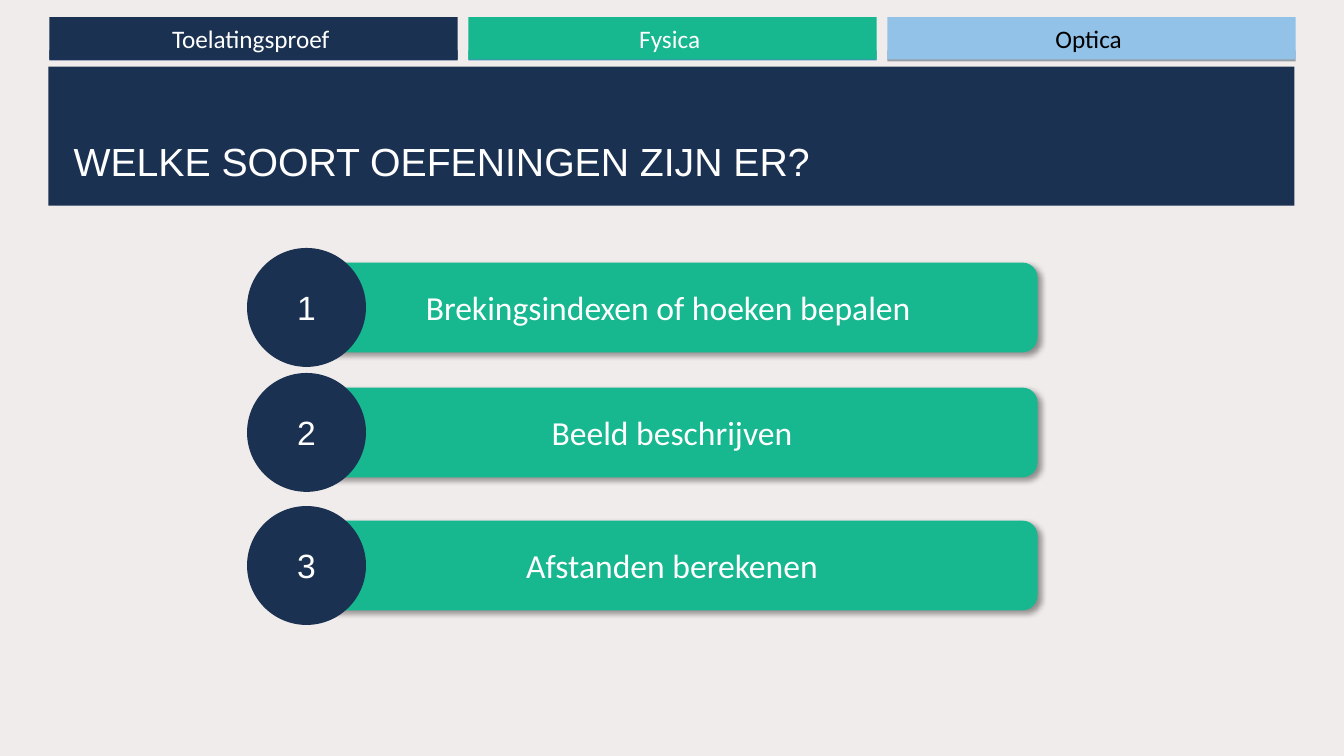
"""Build the slide on kinds of optics exercises."""
from lxml import etree
from pptx import Presentation
from pptx.dml.color import RGBColor
from pptx.enum.shapes import MSO_SHAPE
from pptx.enum.text import MSO_ANCHOR, PP_ALIGN
from pptx.oxml.ns import qn
from pptx.util import Inches, Pt

RECT, ROUND, OVAL = MSO_SHAPE.RECTANGLE, MSO_SHAPE.ROUNDED_RECTANGLE, MSO_SHAPE.OVAL
CENTER, LEFT = PP_ALIGN.CENTER, PP_ALIGN.LEFT
MIDDLE, BOTTOM = MSO_ANCHOR.MIDDLE, MSO_ANCHOR.BOTTOM
NAVY, GREEN, WHITE, BLACK = "1B3151", "17B790", "FFFFFF", "000000"

TITLE = "WELKE SOORT OEFENINGEN ZIJN ER?"
TABS = [
    ("Toelatingsproef ", NAVY, WHITE, "1A3260", 0.1),
    ("Fysica ", GREEN, WHITE, "4590B8", 0.1),
    ("Optica ", "93C2E8", BLACK, "969FA7", 0.11),
]
ITEMS = [
    ("Brekingsindexen of hoeken bepalen ", 3.05),
    ("Beeld beschrijven", 4.29),
    ("Afstanden berekenen", 5.61),
]
EDGE, TAB_W, TAB_H, STEP = 0.49, 4.05, 0.42, 4.155
DISC, DISC_X = 1.18, 2.45
BAR_W, BAR_H = 7.25, 0.89


def color(code):
    return RGBColor.from_string(code)


def write(shape, text, size, font, ink=WHITE, align=CENTER, anchor=MIDDLE):
    frame = shape.text_frame
    frame.text = text
    frame.word_wrap = True
    frame.vertical_anchor = anchor
    para = frame.paragraphs[0]
    para.alignment = align
    for run in para.runs:
        run.font.size = Pt(size)
        run.font.name = font
        run.font.color.rgb = color(ink)


def block(kind, x, y, w, h, fill):
    shape = slide.shapes.add_shape(kind, Inches(x), Inches(y), Inches(w), Inches(h))
    shape.shadow.inherit = False
    shape.fill.solid()
    shape.fill.fore_color.rgb = color(fill)
    shape.line.fill.background()
    return shape


def shade(shape):
    effects = shape.element.spPr.find(qn("a:effectLst"))
    outer = etree.SubElement(effects, qn("a:outerShdw"), blurRad=str(Pt(4)),
                             dist=str(Pt(3)), dir="2700000", algn="tl", rotWithShape="0")
    tone = etree.SubElement(outer, qn("a:srgbClr"), val=BLACK)
    etree.SubElement(tone, qn("a:alpha"), val="40000")


deck = Presentation()
deck.slide_width, deck.slide_height = Inches(13.33), Inches(7.5)
slide = deck.slides.add_slide(deck.slide_layouts[5])
slide.background.fill.solid()
slide.background.fill.fore_color.rgb = color("F0ECEB")

for col, (text, fill, ink, strip, deep) in enumerate(TABS):
    x = EDGE + col * STEP
    block(RECT, x, 0.5, TAB_W, deep, strip)
    write(block(RECT, x, 0.17, TAB_W, TAB_H, fill), text, 18, "Calibri", ink)

block(RECT, 0.48, 0.66, 12.36, 1.38, NAVY)
title = slide.shapes.title
title.left, title.top = Inches(0.63), Inches(0.8)
title.width, title.height = Inches(12.06), Inches(1.08)
title.element.getparent().append(title.element)
write(title, TITLE, 28, "Arial", align=LEFT, anchor=BOTTOM)

for num, (text, mid) in enumerate(ITEMS, 1):
    bar = block(ROUND, DISC_X + DISC / 2, mid - BAR_H / 2, BAR_W, BAR_H, GREEN)
    shade(bar)
    write(bar, text, 24, "Calibri")
    disc = block(OVAL, DISC_X, mid - DISC / 2, DISC, DISC, NAVY)
    write(disc, str(num), 24, "Arial")

deck.save("out.pptx")
